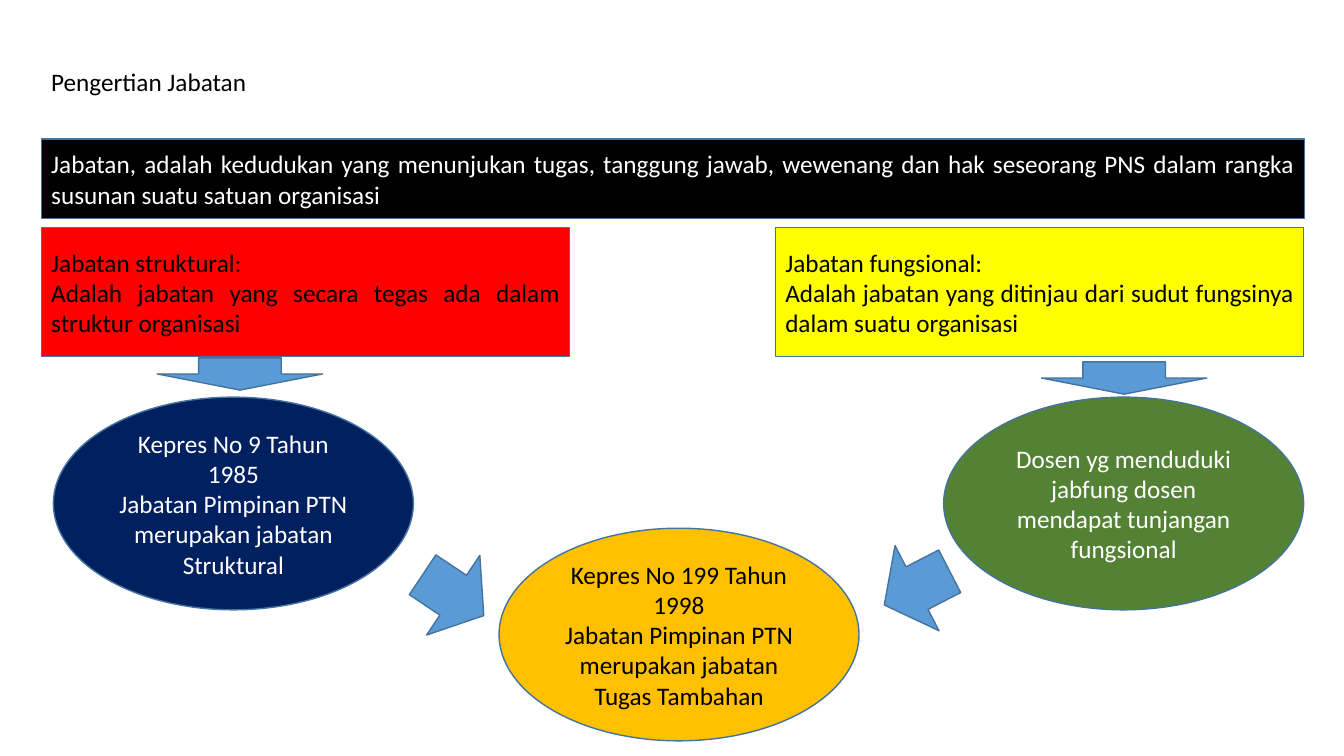
from dataclasses import dataclass

import pptx
import pptx.dml.color
import pptx.enum.shapes
import pptx.enum.text
import pptx.util

Inches = pptx.util.Inches
Shape = pptx.enum.shapes.MSO_SHAPE
Align = pptx.enum.text.PP_ALIGN
Anchor = pptx.enum.text.MSO_ANCHOR


@dataclass(frozen=True)
class Theme:
    font: str = "Calibri"
    size: float = 18
    outline_width: float = 1
    outline: str = "43739E"
    arrow: str = "5B9BD5"
    black: str = "000000"
    white: str = "FFFFFF"
    red: str = "FF0000"
    yellow: str = "FFFF00"
    navy: str = "002060"
    gold: str = "FFC000"
    green: str = "548235"


THEME = Theme()


@dataclass(frozen=True)
class Panel:
    kind: Shape
    left: float
    top: float
    width: float
    height: float
    fill: str
    color: str
    align: Align
    paragraphs: tuple[str, ...]


@dataclass(frozen=True)
class Arrow:
    left: float
    top: float
    width: float
    height: float
    rotation: float = 0


def definition(left: float, top: float, width: float, height: float,
               fill: str, color: str, *paragraphs: str) -> Panel:
    return Panel(Shape.RECTANGLE, left, top, width, height, fill, color, Align.JUSTIFY, paragraphs)


def regulation(left: float, top: float, fill: str, color: str, *paragraphs: str) -> Panel:
    return Panel(Shape.OVAL, left, top, 3.57, 2.11, fill, color, Align.CENTER, paragraphs)


PANELS = (
    definition(0.41, 1.38, 12.53, 0.79, THEME.black, THEME.white,
               "Jabatan, adalah kedudukan yang menunjukan tugas, tanggung jawab, wewenang "
               "dan hak seseorang PNS dalam rangka susunan suatu satuan organisasi"),
    definition(0.41, 2.26, 5.24, 1.28, THEME.red, THEME.black,
               "Jabatan struktural:",
               "Adalah jabatan yang secara tegas ada dalam struktur organisasi"),
    definition(7.69, 2.26, 5.24, 1.28, THEME.yellow, THEME.black,
               "Jabatan fungsional:",
               "Adalah jabatan yang ditinjau dari sudut fungsinya dalam suatu organisasi"),
    regulation(0.53, 3.94, THEME.navy, THEME.white,
               "Kepres No 9 Tahun 1985",
               "Jabatan Pimpinan PTN merupakan jabatan Struktural"),
    regulation(4.95, 5.24, THEME.gold, THEME.black,
               "Kepres No 199 Tahun 1998",
               "Jabatan Pimpinan PTN merupakan jabatan Tugas Tambahan"),
    regulation(9.36, 3.94, THEME.green, THEME.white,
               "Dosen yg menduduki jabfung dosen mendapat tunjangan fungsional"),
)

ARROWS = (
    Arrow(1.56, 3.55, 1.64, 0.32),
    Arrow(10.33, 3.59, 1.64, 0.32),
    Arrow(4.02, 5.54, 0.95, 0.73, 303.7),
    Arrow(8.62, 5.47, 0.95, 0.73, 62.7),
)


def rgb(value: str) -> pptx.dml.color.RGBColor:
    return pptx.dml.color.RGBColor.from_string(value)


def write(frame, paragraphs: tuple[str, ...], *, color: str = THEME.black,
          align: Align = Align.LEFT, anchor: Anchor = Anchor.TOP) -> None:
    frame.word_wrap = True
    frame.vertical_anchor = anchor
    for index, text in enumerate(paragraphs):
        paragraph = frame.add_paragraph() if index else frame.paragraphs[0]
        paragraph.alignment = align
        run = paragraph.add_run()
        run.text = text
        run.font.name = THEME.font
        run.font.size = pptx.util.Pt(THEME.size)
        run.font.color.rgb = rgb(color)


def add_outlined(slide, kind: Shape, part: Panel | Arrow, fill: str):
    outlined = slide.shapes.add_shape(
        kind, Inches(part.left), Inches(part.top), Inches(part.width), Inches(part.height))
    outlined.shadow.inherit = False
    outlined.fill.solid()
    outlined.fill.fore_color.rgb = rgb(fill)
    outlined.line.color.rgb = rgb(THEME.outline)
    outlined.line.width = pptx.util.Pt(THEME.outline_width)
    return outlined


def add_panel(slide, panel: Panel) -> None:
    body = add_outlined(slide, panel.kind, panel, panel.fill)
    write(body.text_frame, panel.paragraphs, color=panel.color,
          align=panel.align, anchor=Anchor.MIDDLE)


def add_arrow(slide, arrow: Arrow) -> None:
    add_outlined(slide, Shape.DOWN_ARROW, arrow, THEME.arrow).rotation = arrow.rotation


def main() -> None:
    deck = pptx.Presentation()
    deck.slide_width, deck.slide_height = Inches(13.33), Inches(7.5)
    slide = deck.slides.add_slide(deck.slide_layouts[6])
    heading = slide.shapes.add_textbox(Inches(0.41), Inches(0.61), Inches(3.17), Inches(0.4))
    write(heading.text_frame, ("Pengertian Jabatan",))
    heading.text_frame.auto_size = pptx.enum.text.MSO_AUTO_SIZE.SHAPE_TO_FIT_TEXT
    for panel in PANELS:
        add_panel(slide, panel)
    for arrow in ARROWS:
        add_arrow(slide, arrow)
    deck.save("out.pptx")


if __name__ == "__main__":
    main()
